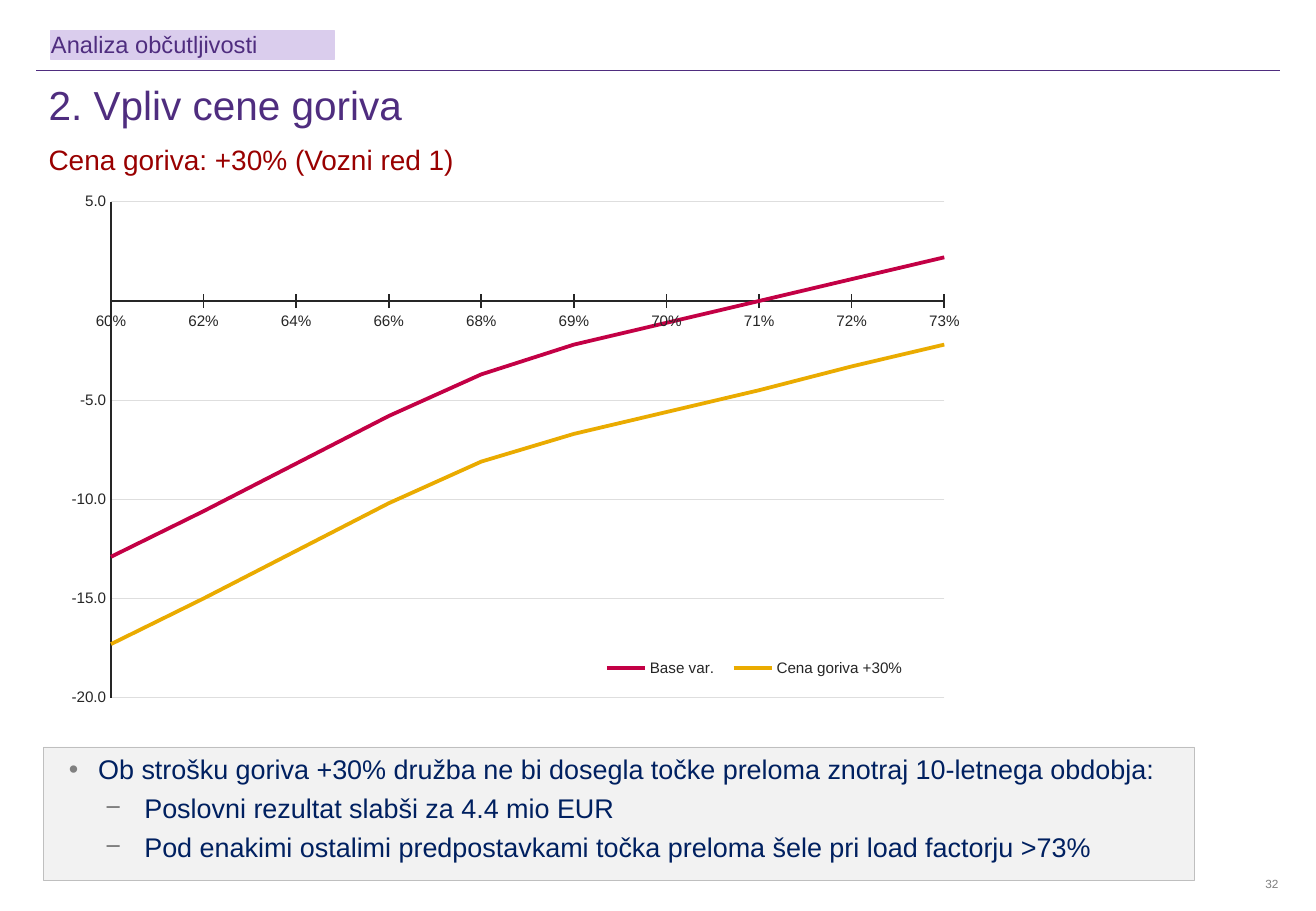
from lxml import etree
from pptx import Presentation
from pptx.chart.data import CategoryChartData
from pptx.dml.color import RGBColor
from pptx.enum.chart import XL_CHART_TYPE, XL_LEGEND_POSITION, XL_MARKER_STYLE, XL_TICK_MARK
from pptx.enum.shapes import MSO_CONNECTOR, MSO_SHAPE
from pptx.enum.text import MSO_ANCHOR, PP_ALIGN
from pptx.oxml import parse_xml
from pptx.oxml.ns import nsdecls, qn
from pptx.util import Inches, Pt

LINE, BOTTOM, NO_MARKER = XL_CHART_TYPE.LINE, XL_LEGEND_POSITION.BOTTOM, XL_MARKER_STYLE.NONE
CROSS, NO_TICK = XL_TICK_MARK.CROSS, XL_TICK_MARK.NONE
STRAIGHT, RECT = MSO_CONNECTOR.STRAIGHT, MSO_SHAPE.RECTANGLE
TOP, MIDDLE = MSO_ANCHOR.TOP, MSO_ANCHOR.MIDDLE
LEFT, RIGHT = PP_ALIGN.LEFT, PP_ALIGN.RIGHT

PURPLE = RGBColor(0x4F, 0x2D, 0x7F)
LILAC = RGBColor(0xDA, 0xCD, 0xED)
DARK_RED = RGBColor(0x99, 0x00, 0x00)
NAVY = RGBColor(0x00, 0x20, 0x60)
GRAY = RGBColor(0x7F, 0x7F, 0x7F)
PALE_GRAY = RGBColor(0xF2, 0xF2, 0xF2)
BORDER_GRAY = RGBColor(0xBF, 0xBF, 0xBF)
GRID_GRAY = RGBColor(0xDE, 0xDE, 0xDE)
CHARCOAL = RGBColor(0x26, 0x26, 0x26)
CRIMSON = RGBColor(0xC3, 0x00, 0x45)
GOLD = RGBColor(0xEA, 0xAB, 0x00)

LOAD_FACTORS = ["60%", "62%", "64%", "66%", "68%", "69%", "70%", "71%", "72%", "73%"]
RESULTS = [
    ("Base var.", CRIMSON, [-12.9, -10.6, -8.2, -5.8, -3.7, -2.2, -1.1, 0, 1.1, 2.2]),
    ("Cena goriva +30%", GOLD, [-17.3, -15, -12.6, -10.2, -8.1, -6.7, -5.6, -4.5, -3.3, -2.2]),
]
FINDINGS = [
    (0, "Ob strošku goriva +30% družba ne bi dosegla točke preloma znotraj 10-letnega obdobja:"),
    (3, "Poslovni rezultat slabši za 4.4 mio EUR"),
    (3, "Pod enakimi ostalimi predpostavkami točka preloma šele pri load factorju >73%"),
]
BULLETS = {0: ("•", 0.35, -0.24), 3: ("−", 0.73, -0.32)}


class SlideBuilder:
    font = "Arial"

    def __init__(self, prs):
        self.s = prs.slides.add_slide(prs.slide_layouts[5])

    def apply(self, target, values):
        for name, value in values.items():
            setattr(target, name, value)

    def style_font(self, font, size, color):
        self.apply(font, {"name": self.font, "size": Pt(size), "bold": False})
        font.color.rgb = color

    def style_line(self, line, color, width):
        line.color.rgb = color
        line.width = Pt(width)

    def frame(self, sp, inset=0, wrap=True, anchor=TOP):
        tf = sp.text_frame
        self.apply(tf, {
            "margin_left": Inches(inset), "margin_right": Inches(inset),
            "margin_top": Inches(inset / 2), "margin_bottom": Inches(inset / 2),
            "word_wrap": wrap, "vertical_anchor": anchor,
        })
        return tf

    def add_text(self, p, text, size, color, align=LEFT):
        p.alignment = align
        r = p.add_run()
        r.text = text
        self.style_font(r.font, size, color)

    def title(self, box, text):
        sp = self.s.shapes.title
        self.apply(sp, dict(zip(("left", "top", "width", "height"), map(Inches, box))))
        p = self.frame(sp, 0.1, anchor=MIDDLE).paragraphs[0]
        p.line_spacing = 0.9
        self.add_text(p, text, 24, PURPLE)

    def text(self, box, text, size, color, align=LEFT, wrap=True):
        sp = self.s.shapes.add_textbox(*map(Inches, box))
        self.add_text(self.frame(sp, wrap=wrap).paragraphs[0], text, size, color, align)

    def panel(self, box, fill, border, width, inset=0):
        sp = self.s.shapes.add_shape(RECT, *map(Inches, box))
        sp.shadow.inherit = False
        sp.fill.solid()
        sp.fill.fore_color.rgb = fill
        self.style_line(sp.line, border, width)
        return self.frame(sp, inset)

    def bullets(self, tf, items, size, color):
        for i, (level, text) in enumerate(items):
            p = tf.add_paragraph() if i else tf.paragraphs[0]
            p.level = level
            p.space_before = Pt(3.7 if i else 0)
            char, margin, indent = BULLETS[level]
            pPr = p._p.get_or_add_pPr()
            pPr.set("marL", str(Inches(margin)))
            pPr.set("indent", str(Inches(indent)))
            clr = etree.SubElement(pPr, qn("a:buClr"))
            etree.SubElement(clr, qn("a:srgbClr")).set("val", "808080")
            etree.SubElement(pPr, qn("a:buFont")).set("typeface", self.font)
            etree.SubElement(pPr, qn("a:buChar")).set("char", char)
            self.add_text(p, text, size, color)

    def rule(self, x1, x2, y, color, width):
        cn = self.s.shapes.add_connector(STRAIGHT, *map(Inches, (x1, y, x2, y)))
        self.style_line(cn.line, color, width)
        etree.SubElement(cn._element.spPr, qn("a:effectLst"))

    def place(self, parent, position, inner=False):
        for old in parent.findall(qn("c:layout")):
            parent.remove(old)
        target = '<c:layoutTarget val="inner"/>' if inner else ""
        modes = "".join(f'<c:{a}Mode val="edge"/>' for a in "xy")
        sizes = "".join(f'<c:{a} val="{v}"/>' for a, v in zip("xywh", position))
        layout = parse_xml(f'<c:layout {nsdecls("c")}><c:manualLayout>{target}{modes}{sizes}'
                           '</c:manualLayout></c:layout>')
        parent.insert(0 if inner else 1, layout)

    def line_chart(self, box, categories, series):
        data = CategoryChartData()
        data.categories = categories
        for name, _, values in series:
            data.add_series(name, values)
        chart = self.s.shapes.add_chart(LINE, *map(Inches, box), data).chart
        self.apply(chart, {"has_title": False, "has_legend": True})
        self.style_font(chart.font, 10, CHARCOAL)
        chart.plots[0].vary_by_categories = False
        for ser, (_, color, _) in zip(chart.plots[0].series, series):
            ser.smooth = False
            ser.marker.style = NO_MARKER
            self.style_line(ser.format.line, color, 2.25)
        cat, val = chart.category_axis, chart.value_axis
        for axis, tick in ((cat, CROSS), (val, NO_TICK)):
            self.apply(axis, {"major_tick_mark": tick, "minor_tick_mark": NO_TICK})
            self.style_font(axis.tick_labels.font, 9, CHARCOAL)
            self.style_line(axis.format.line, CHARCOAL, 1)
        self.apply(val, {"minimum_scale": -20, "maximum_scale": 5, "major_unit": 5,
                         "has_major_gridlines": True})
        self.style_line(val.major_gridlines.format.line, GRID_GRAY, 0.75)
        self.apply(val.tick_labels, {"number_format": '#,##0.0;\\-#,##0.0;" "',
                                     "number_format_is_linked": False})
        cross = val._element.find(qn("c:crossBetween"))
        if cross is None:
            cross = etree.Element(qn("c:crossBetween"))
            val._element.find(qn("c:majorUnit")).addprevious(cross)
        cross.set("val", "midCat")
        self.apply(chart.legend, {"position": BOTTOM, "include_in_layout": False})
        self.style_font(chart.legend.font, 9, CHARCOAL)
        self.place(chart.legend._element, (0.59, 0.88, 0.35, 0.05))
        self.place(chart._chartSpace.chart.plotArea, (0.07, 0.03, 0.9, 0.93), inner=True)


def main():
    prs = Presentation()
    prs.slide_width, prs.slide_height = Inches(10.83), Inches(7.5)
    b = SlideBuilder(prs)
    b.rule(0.3, 10.53, 0.58, PURPLE, 0.25)
    b.text((10.4, 7.22, 0.12, 0.12), "32", 7, GRAY, RIGHT, wrap=False)
    findings = b.panel((0.36, 6.15, 9.47, 1.1), PALE_GRAY, BORDER_GRAY, 0.25, inset=0.1)
    b.bullets(findings, FINDINGS, 16, NAVY)
    b.title((0.3, 0.68, 10.24, 0.4), "2. Vpliv cene goriva")
    tag = b.panel((0.42, 0.25, 2.33, 0.24), LILAC, LILAC, 0.75)
    b.add_text(tag.paragraphs[0], "Analiza občutljivosti", 14, PURPLE)
    b.text((0.4, 1.17, 6.73, 0.28), "Cena goriva: +30% (Vozni red 1)", 16.6, DARK_RED)
    b.line_chart((0.38, 1.53, 7.62, 4.39), LOAD_FACTORS, RESULTS)
    prs.save("out.pptx")


if __name__ == "__main__":
    main()
